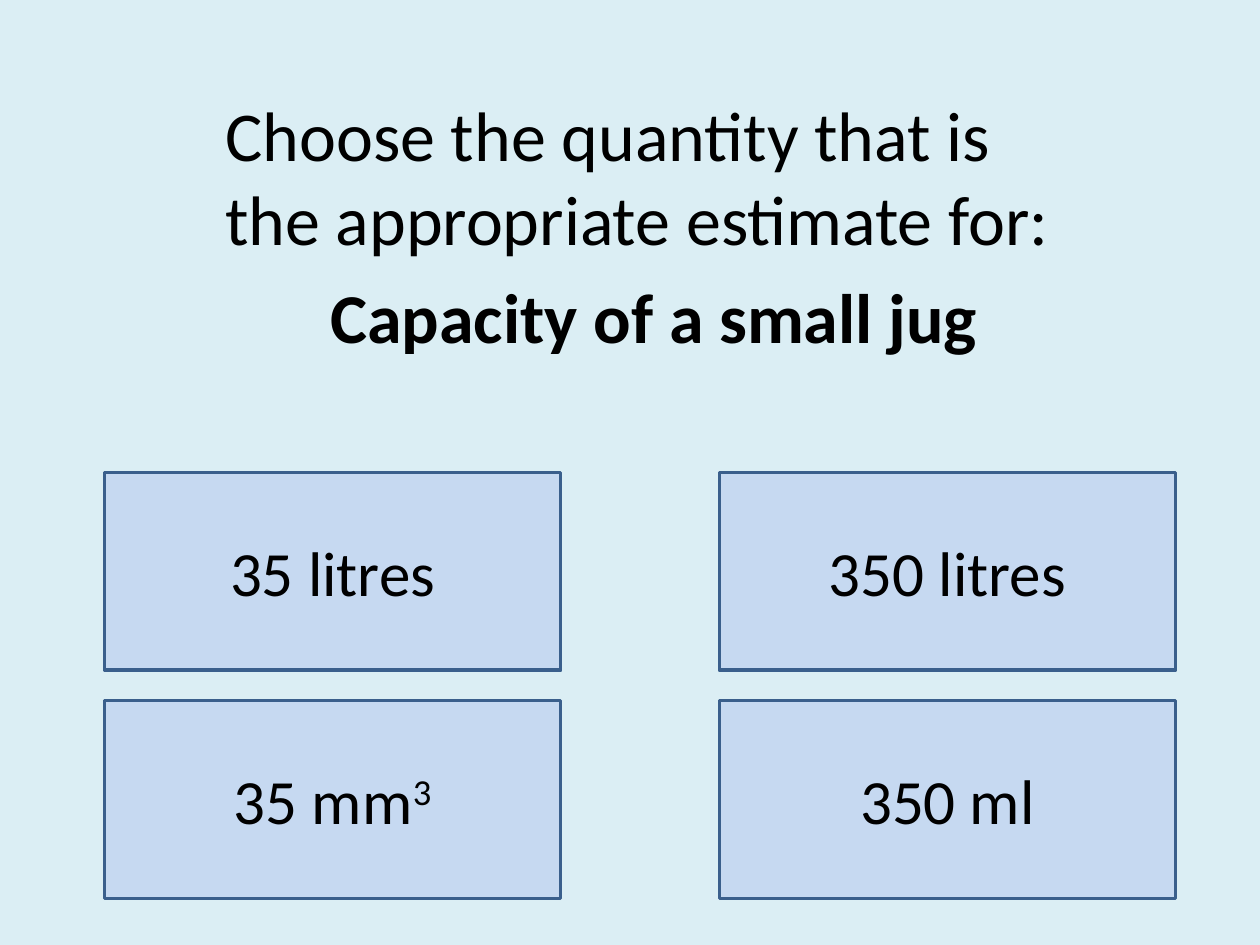
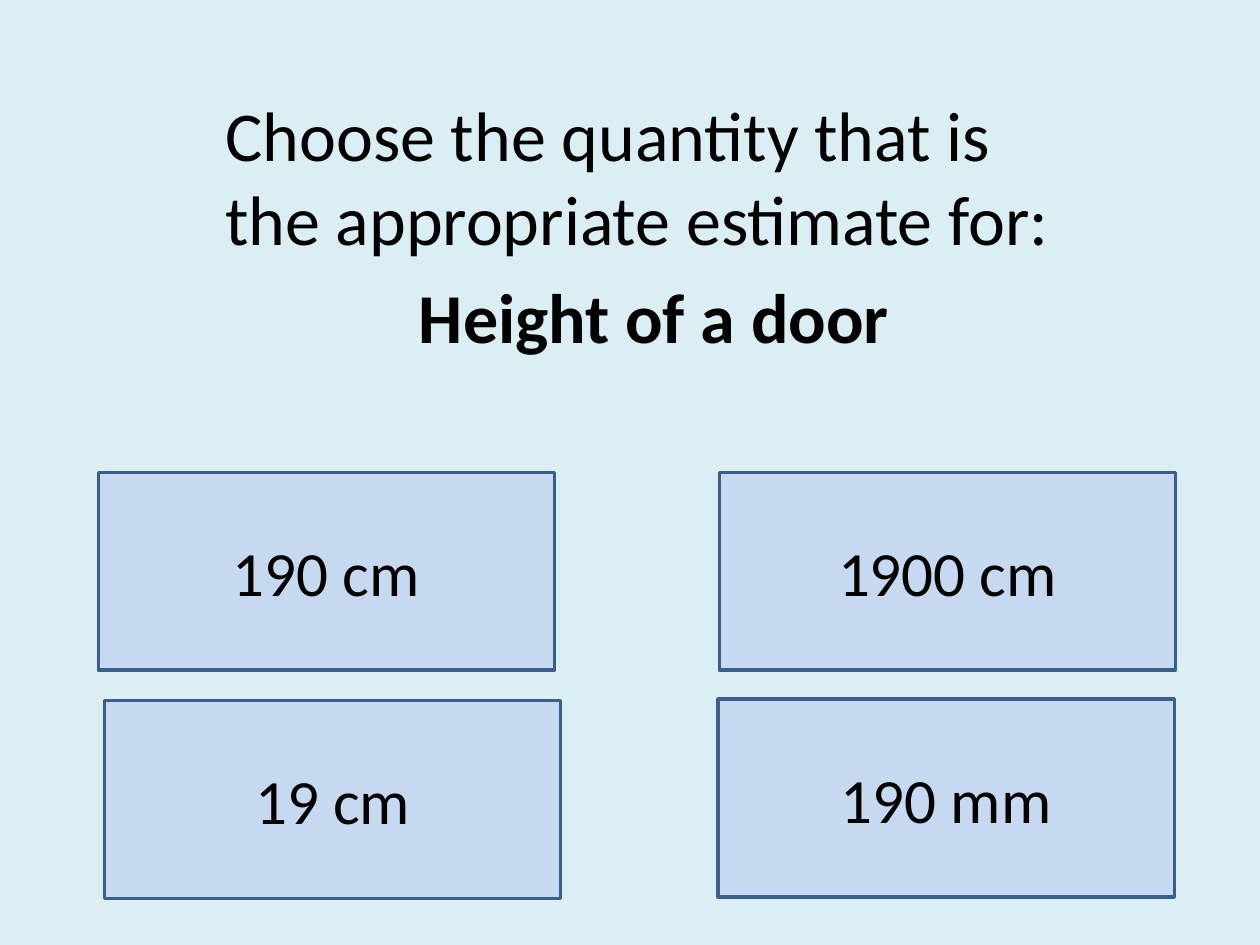
from pptx import Presentation
from pptx.dml.color import RGBColor
from pptx.enum.shapes import MSO_SHAPE
from pptx.enum.text import MSO_ANCHOR, PP_ALIGN
from pptx.util import Inches, Pt

BACKGROUND = RGBColor(0xDB, 0xEE, 0xF4)
CARD_FILL = RGBColor(0xC6, 0xD9, 0xF1)
CARD_LINE = RGBColor(0x3A, 0x5F, 0x8C)
INK = RGBColor(0, 0, 0)
FONT = "Calibri"

PROMPT = "Choose the quantity that is the appropriate estimate for:"
PROMPT_BOX = (1.69, 0.68, 7, 2.45)
ANSWER_BOX = (0.83, 3.75, 8.5, 3.38)
CARD_W, CARD_H = 3.62, 1.57

# Answers run row by row: (text, superscript, (nudge right, nudge down)).
QUESTIONS = [
    ("Capacity of a small jug", [
        ("35 litres", "", (0, 0)), ("350 litres", "", (0, 0)),
        ("35 mm", "3", (0, 0)), ("350 ml", "", (0, 0))]),
    ("Height of a door", [
        ("190 cm", "", (-0.05, 0)), ("1900 cm", "", (0, 0)),
        ("19 cm", "", (0, 0)), ("190 mm", "", (-0.01, -0.01))]),
]


def style_runs(p, size, bold=False):
    for r in p.runs:
        r.font.name, r.font.size, r.font.bold = FONT, Pt(size), bold
        r.font.color.rgb = INK


def add_prompt(s, box, subject):
    tf = s.shapes.add_textbox(*map(Inches, box)).text_frame
    tf.word_wrap = True
    tf.text = PROMPT
    style_runs(tf.paragraphs[0], 40)
    p = tf.add_paragraph()
    p.text = subject
    p.alignment = PP_ALIGN.CENTER
    p.space_before = Pt(8)
    style_runs(p, 40, bold=True)


def add_card(s, x, y, text, superscript):
    sp = s.shapes.add_shape(MSO_SHAPE.RECTANGLE, Inches(x), Inches(y),
                            Inches(CARD_W), Inches(CARD_H))
    sp.shadow.inherit = False
    sp.fill.solid()
    sp.fill.fore_color.rgb = CARD_FILL
    sp.line.color.rgb = CARD_LINE
    sp.line.width = Pt(2)
    tf = sp.text_frame
    tf.vertical_anchor = MSO_ANCHOR.MIDDLE
    tf.text = text
    p = tf.paragraphs[0]
    p.alignment = PP_ALIGN.CENTER
    if superscript:
        r = p.add_run()
        r.text = superscript
        r.font._element.set("baseline", "30000")
    style_runs(p, 36)


def add_answers(s, box, answers):
    """Spread the cards over a two-by-two grid that fills the box."""
    left, top, width, height = box
    for i, (text, superscript, (dx, dy)) in enumerate(answers):
        row, col = divmod(i, 2)
        add_card(s, left + col * (width - CARD_W) + dx,
                 top + row * (height - CARD_H) + dy, text, superscript)


def add_question_slide(prs, subject, answers):
    s = prs.slides.add_slide(prs.slide_layouts[6])
    s.background.fill.solid()
    s.background.fill.fore_color.rgb = BACKGROUND
    add_answers(s, ANSWER_BOX, answers)
    add_prompt(s, PROMPT_BOX, subject)


def main():
    prs = Presentation()
    prs.slide_width, prs.slide_height = Inches(10), Inches(7.5)
    for subject, answers in QUESTIONS:
        add_question_slide(prs, subject, answers)
    prs.save("out.pptx")


if __name__ == "__main__":
    main()
